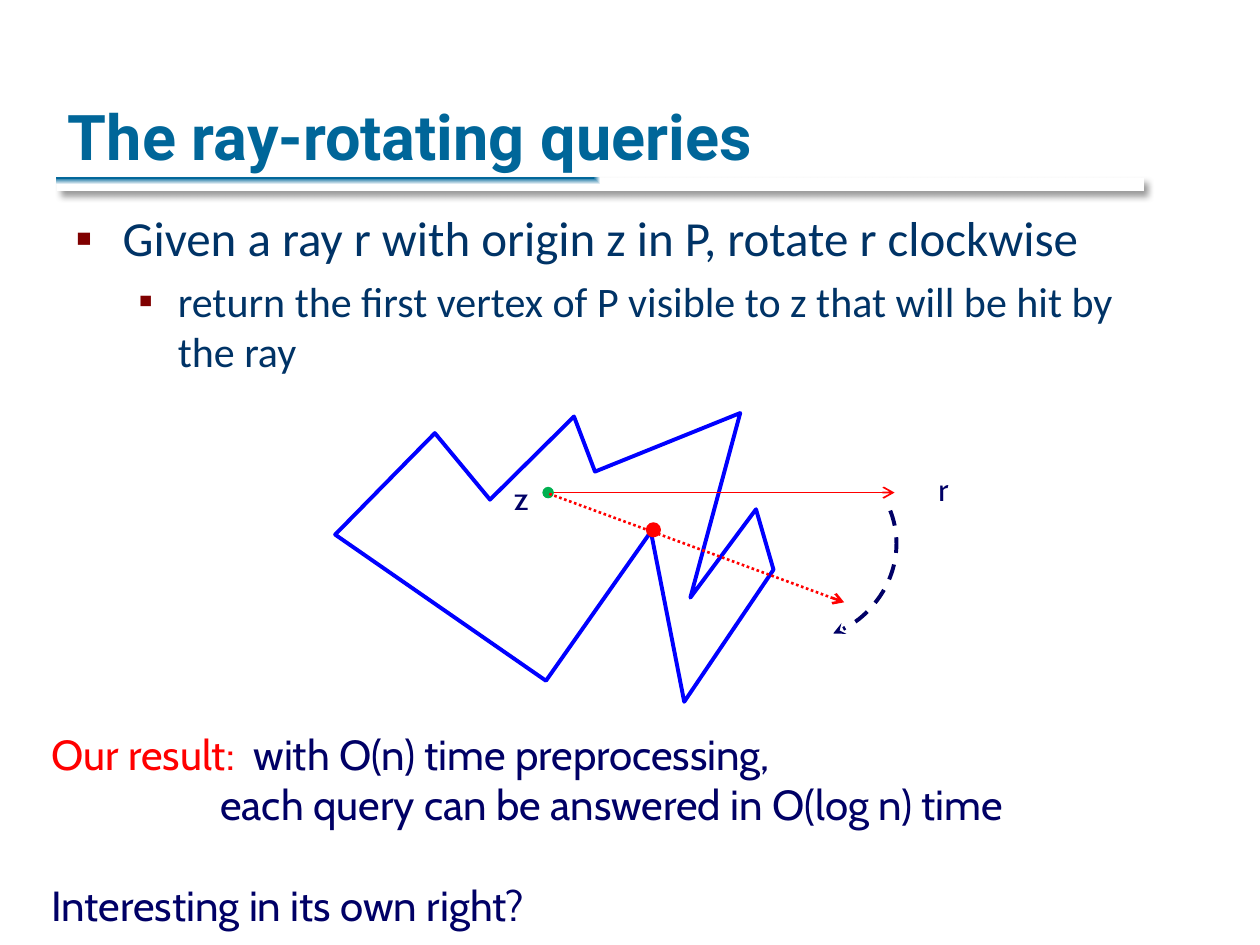
from lxml import etree
from pptx import Presentation
from pptx import util as u
from pptx.dml.color import RGBColor
from pptx.enum import dml, shapes, text
from pptx.oxml import ns

COL = dict(teal="006699", navy="003366", ink="000066", maroon="800000",
           red="FF0000", blue="0000FF", green="00B050", white="FFFFFF",
           black="000000")


def rgb(name):
    return RGBColor.from_string(COL[name])


def sub(node, tag, **atts):
    """Append a drawing element and return it."""
    item = etree.SubElement(node, ns.qn("a:" + tag))
    for key, val in atts.items():
        item.set(key, str(val))
    return item


def tint(node, name):
    return sub(node, "srgbClr", val=COL[name])


def write(para, words, font="Cabin", size=24, color="ink", bold=False):
    """Add one formatted run to a paragraph."""
    run = para.add_run()
    run.text = words
    run.font.name, run.font.size, run.font.bold = font, u.Pt(size), bold
    run.font.color.rgb = rgb(color)


class Page:
    def __init__(self, deck):
        self.slide = deck.slides.add_slide(deck.slide_layouts[6])
        self.items = self.slide.shapes

    def box(self, x, y, w, h, wrap=True, low=False):
        frame = self.items.add_textbox(*map(u.Pt, (x, y, w, h))).text_frame
        frame.word_wrap = wrap
        if low:
            frame.vertical_anchor = text.MSO_ANCHOR.BOTTOM
        return frame

    def label(self, words, x, y, w, h, **form):
        write(self.box(x, y, w, h, wrap=False).paragraphs[0], words, **form)

    def bullet(self, para, words, left, hang, gap, **form):
        para.space_before = u.Pt(gap)
        props = para._p.get_or_add_pPr()
        props.set("marL", str(u.Pt(left)))
        props.set("indent", str(u.Pt(-hang)))
        tint(sub(props, "buClr"), "maroon")
        sub(props, "buFont", typeface="Arial")
        sub(props, "buChar", char="▪")
        write(para, words, **form)

    def stroke(self, item, color, width, dash=None, tip=None):
        item.line.color.rgb = rgb(color)
        item.line.width = u.Pt(width)
        if dash:
            item.line.dash_style = dash
        if tip:
            sub(item.line._get_or_add_ln(), "tailEnd", type=tip)

    def shape(self, kind, x, y, w, h, fill=None):
        item = self.items.add_shape(kind, *map(u.Pt, (x, y, w, h)))
        item.shadow.inherit = False
        if fill:
            item.fill.solid()
            item.fill.fore_color.rgb = rgb(fill)
        else:
            item.fill.background()
        return item

    def dot(self, x, y, size, color):
        item = self.shape(shapes.MSO_SHAPE.OVAL, x, y, size, size, color)
        self.stroke(item, color, 0.75)

    def arrow(self, x1, y1, x2, y2, width, dash=None):
        item = self.items.add_connector(
            shapes.MSO_CONNECTOR.STRAIGHT, *map(u.Pt, (x1, y1, x2, y2)))
        self.stroke(item, "red", width, dash, "arrow")
        sub(item._element.spPr, "effectLst")

    def outline(self, points, color, width):
        spots = [(u.Pt(x), u.Pt(y)) for x, y in points]
        pen = self.items.build_freeform(*spots[0], scale=1.0)
        pen.add_line_segments(spots[1:], close=True)
        item = pen.convert_to_shape()
        item.shadow.inherit = False
        item.fill.background()
        self.stroke(item, color, width)

    def rule(self, x, y, w, h):
        """Bar with a corner gradient and a soft shadow."""
        item = self.shape(shapes.MSO_SHAPE.RECTANGLE, x, y, w, h)
        item.line.fill.background()
        props = item._element.spPr
        grad = sub(props, "gradFill", rotWithShape=0)
        stops = sub(grad, "gsLst")
        for pos, name in ((0, "teal"), (100000, "white")):
            tint(sub(stops, "gs", pos=pos), name)
        sub(sub(grad, "path", path="rect"), "fillToRect", r=100000, b=100000)
        props.replace(props.find(ns.qn("a:noFill")), grad)
        cast = sub(props.find(ns.qn("a:effectLst")), "outerShdw",
                   blurRad=u.Pt(4), dist=u.Pt(3), dir=45 * 60000,
                   algn="ctr", rotWithShape=0)
        sub(tint(cast, "black"), "alpha", val=40000)


def main():
    deck = Presentation()
    deck.slide_width, deck.slide_height = u.Pt(720), u.Pt(540)
    page = Page(deck)

    # Heading and rule
    page.rule(32.4, 101.5, 621.4, 7.9)
    head = page.box(31.7, 12.2, 612, 90, low=True)
    write(head.paragraphs[0], "The ray-rotating queries", font="Roboto",
          size=36, color="teal", bold=True)

    # Bullets
    body = page.box(36, 115.2, 644.4, 109.4)
    form = dict(font="Calibri", color="navy")
    page.bullet(body.paragraphs[0],
                "Given a ray r with origin z in P, rotate r clockwise",
                27, 27, 1.5, size=28, **form)
    page.bullet(body.add_paragraph(),
                "return the first vertex of P visible to z that will be "
                "hit by the ray", 58.5, 22.5, 4.8, size=24, **form)

    # Polygon P
    page.outline([(191.5, 305.5), (248.5, 247.5), (280, 285.5), (328, 238),
                  (340, 269.5), (423, 236), (394.5, 341.5), (432, 291),
                  (442, 325.5), (391, 401), (371.5, 301.5), (372.5, 303),
                  (312, 389)], "blue", 2.25)

    # Rays, their origin and the vertex hit
    page.arrow(314.6, 281.5, 511.2, 281.5, 1)
    page.dot(310.3, 278.6, 5.8, "green")
    page.label("r", 529.2, 265, 21.6, 28.8, size=18)
    page.label("z", 286.6, 270, 22.3, 28.8, size=18)
    turn = page.shape(shapes.MSO_SHAPE.ARC, 403.2, 256.3, 106.6, 112.3)
    turn.rotation = 68.4
    page.stroke(turn, "ink", 2.25, dml.MSO_LINE.DASH, "stealth")
    page.dot(369.4, 298.8, 7.9, "red")
    page.arrow(313.9, 282.2, 482.4, 344.2, 1.5, dml.MSO_LINE.ROUND_DOT)

    # Result
    note = page.box(22.3, 412.6, 641.5, 123.8)
    first = note.paragraphs[0]
    tabs = sub(first._p.get_or_add_pPr(), "tabLst")
    sub(tabs, "tab", pos=u.Pt(115.5), algn="l")
    write(first, "Our result:\t", color="red")
    write(first, "with O(n) time preprocessing,")
    second = note.add_paragraph()
    second._p.get_or_add_pPr().set("marL", str(u.Pt(96.5)))
    write(second, "each query can be answered in O(log n) time")
    last = note.add_paragraph()
    last.space_before = u.Pt(29)
    write(last, "Interesting in its own right?")

    deck.save("out.pptx")


if __name__ == "__main__":
    main()
